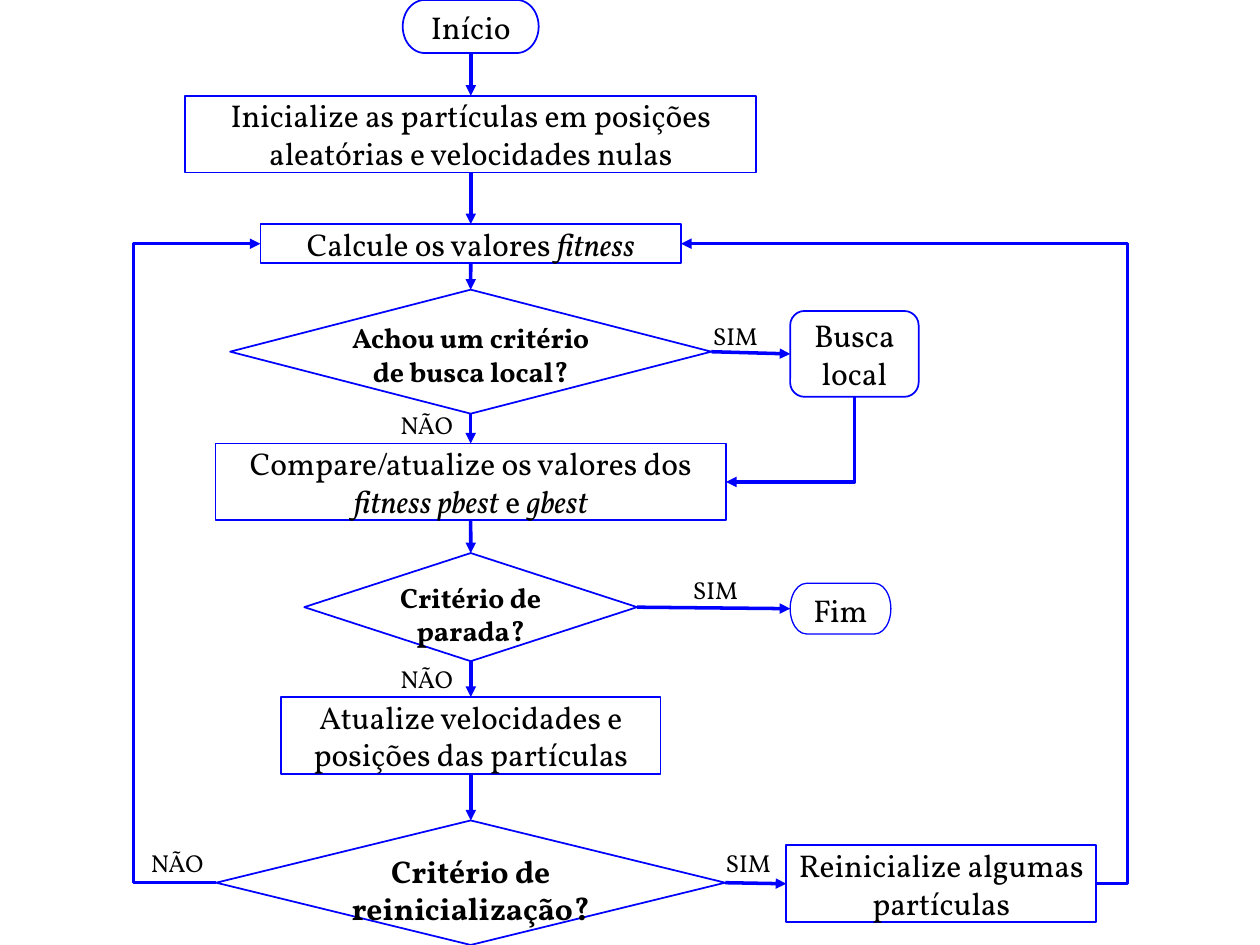
from lxml.etree import SubElement
from pptx import Presentation
from pptx.dml.color import RGBColor
from pptx.enum.shapes import MSO_CONNECTOR as Route, MSO_SHAPE as Shape
from pptx.enum.text import MSO_ANCHOR as Anchor, PP_ALIGN as Align
from pptx.oxml.ns import qn
from pptx.util import Cm, Pt

BLUE = RGBColor(0x00, 0x00, 0xFF)
BLACK = RGBColor(0x00, 0x00, 0x00)
TOP, LEFT, BOTTOM, RIGHT = range(4)
AXIS = 9.49


class Flowchart:
    font = "Vollkorn"

    def __init__(self, page):
        self.page = page

    def add_text(self, frame, runs, size, bold=False, align=Align.LEFT):
        frame.word_wrap = True
        para = frame.paragraphs[0]
        para.alignment = align
        for text, italic in runs:
            span = para.add_run()
            span.text = text
            font = span.font
            font.name, font.size = self.font, Pt(size)
            font.bold, font.italic = bold, italic
            font.color.rgb = BLACK

    def node(self, kind, place, runs, size=18, bold=False,
             anchor=Anchor.TOP, weight=1):
        box = self.page.shapes.add_shape(kind, *map(Cm, place))
        box.shadow.inherit = False
        box.fill.background()
        box.line.color.rgb = BLUE
        box.line.width = Pt(weight)
        frame = box.text_frame
        frame.margin_left = frame.margin_right = 0
        frame.margin_top = frame.margin_bottom = 0
        frame.vertical_anchor = anchor
        self.add_text(frame, runs, size, bold, Align.CENTER)
        return box

    def process(self, place, *runs, corner=0):
        box = self.node(Shape.ROUNDED_RECTANGLE, place, runs, anchor=Anchor.MIDDLE)
        box.adjustments[0] = corner
        return box

    def decision(self, place, text, size=16):
        return self.node(Shape.FLOWCHART_DECISION, place, [(text, False)], size, True)

    def terminal(self, place, text, weight=1):
        return self.node(Shape.FLOWCHART_TERMINATOR, place, [(text, False)],
                         weight=weight)

    def label(self, left, top, width, text):
        box = self.page.shapes.add_textbox(Cm(left), Cm(top), Cm(width), Cm(0.84))
        self.add_text(box.text_frame, [(text, False)], 14)

    def arrow(self, source, source_side, target, target_side, route=Route.STRAIGHT):
        line = self.page.shapes.add_connector(route, 0, 0, 0, 0)
        line.begin_connect(source, source_side)
        line.end_connect(target, target_side)
        line.line.color.rgb = BLUE
        line.line.width = Pt(2)
        properties = line._element.spPr
        SubElement(properties.find(qn("a:ln")), qn("a:tailEnd"), type="triangle")
        SubElement(properties, qn("a:effectLst"))
        return line

    def loop(self, source, source_side, target, target_side, lane):
        line = self.arrow(source, source_side, target, target_side, Route.ELBOW)
        ratio = (Cm(lane) - line.begin_x) / (line.end_x - line.begin_x)
        guides = line._element.spPr.find(qn("a:prstGeom")).get_or_add_avLst()
        SubElement(guides, qn("a:gd"), name="adj1", fmla=f"val {round(ratio * 100000)}")

    def corner(self, source, target):
        line = self.arrow(source, BOTTOM, target, RIGHT, Route.ELBOW)
        properties = line._element.spPr
        properties.find(qn("a:prstGeom")).set("prst", "bentConnector2")
        middle_x = (line.begin_x + line.end_x) // 2
        middle_y = (line.begin_y + line.end_y) // 2
        across, down = line.width, line.height
        line.left, line.top = middle_x - down // 2, middle_y - across // 2
        line.width, line.height = down, across
        frame = properties.find(qn("a:xfrm"))
        frame.attrib.pop("flipH", None)
        frame.set("rot", "5400000")


def centred(top, width, height):
    return AXIS - width / 2, top, width, height


def main():
    deck = Presentation()
    deck.slide_width, deck.slide_height = Cm(25.4), Cm(19.05)
    chart = Flowchart(deck.slides.add_slide(deck.slide_layouts[6]))

    initialise = chart.process(
        centred(1.93, 11.51, 1.55),
        ("Inicialize as partículas em posições aleatórias e velocidades nulas", False))
    fitness = chart.process(
        centred(4.52, 8.48, 0.79), ("Calcule os valores ", False), ("fitness", True))
    search_test = chart.decision(
        centred(5.84, 9.7, 2.5), "Achou um critério de busca local?")
    compare = chart.process(
        centred(8.94, 10.29, 1.55),
        ("Compare/atualize os valores dos ", False), ("fitness pbest", True),
        (" e ", False), ("gbest", True))
    stop_test = chart.decision(centred(11.15, 6.71, 2.18), "Critério de parada?")
    update = chart.process(
        centred(14.05, 7.65, 1.55),
        ("Atualize velocidades e posições das partículas", False))
    restart_test = chart.decision(
        centred(16.54, 10.26, 2.51), "Critério de reinicialização?", 18)
    start = chart.terminal(centred(0, 2.74, 1.07), "Início")
    end = chart.terminal((15.93, 11.76, 2.03, 1.02), "Fim", 0.75)
    search = chart.process(
        (15.93, 6.27, 2.59, 1.73), ("Busca local", False), corner=0.167)
    restart = chart.process(
        (15.85, 17.04, 6.25, 1.55), ("Reinicialize algumas partículas", False))

    steps = [start, initialise, fitness, search_test, compare, stop_test, update,
             restart_test]
    for source, target in zip(steps, steps[1:]):
        chart.arrow(source, BOTTOM, target, TOP)
    for test, outcome in ((search_test, search), (stop_test, end),
                          (restart_test, restart)):
        chart.arrow(test, RIGHT, outcome, LEFT)
    chart.loop(restart_test, LEFT, fitness, LEFT, 2.69)
    chart.loop(restart, RIGHT, fitness, RIGHT, 22.73)

    for left, top, width, text in (
            (14.12, 6.35, 1.5, "SIM"), (13.72, 11.46, 1.57, "SIM"),
            (14.38, 16.97, 2.13, "SIM"), (7.82, 8.15, 1.73, "NÃO"),
            (7.82, 13.26, 1.73, "NÃO"), (2.79, 16.97, 1.96, "NÃO")):
        chart.label(left, top, width, text)
    chart.corner(search, compare)

    deck.save("out.pptx")


if __name__ == "__main__":
    main()
